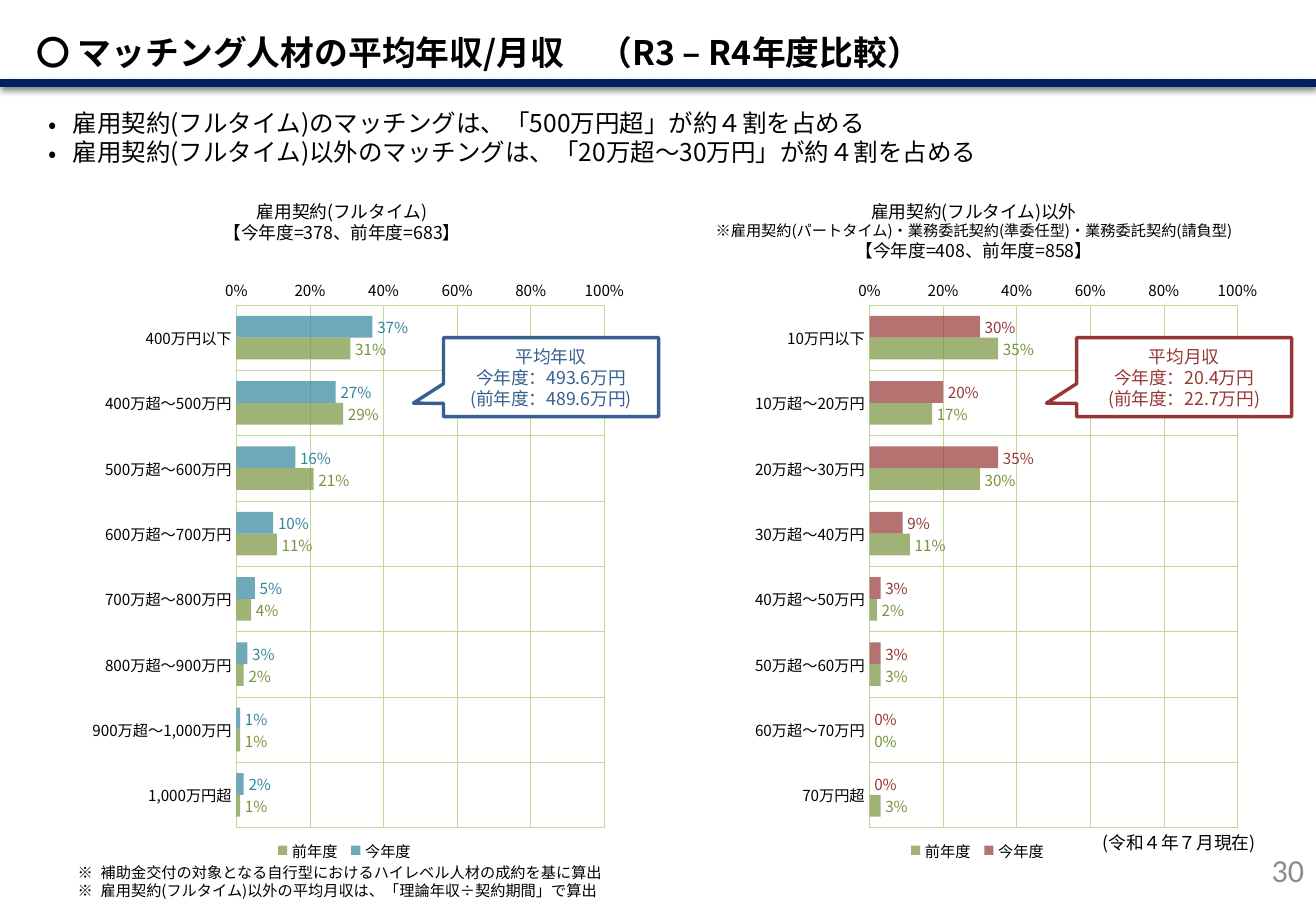
from lxml import etree
from pptx import Presentation
from pptx.chart.data import CategoryChartData
from pptx.dml.color import RGBColor
from pptx.enum.chart import XL_CHART_TYPE as CT, XL_LABEL_POSITION as LP
from pptx.enum.chart import XL_LEGEND_POSITION as LEG, XL_TICK_MARK as TICK
from pptx.enum.shapes import MSO_CONNECTOR, MSO_SHAPE
from pptx.enum.text import MSO_ANCHOR as ANC, PP_ALIGN as AL
from pptx.oxml import parse_xml
from pptx.oxml.ns import nsdecls, qn
from pptx.util import Inches, Pt

FONT = "Noto Sans CJK JP"
COLORS = {"black": "000000", "white": "FFFFFF", "navy": "002060", "shadow": "808080",
          "grid": "C3D69B", "last": "77933C", "teal": "31859C", "blue": "376092",
          "red": "953735", "page": "8C8C8C"}
TITLE = "〇 マッチング人材の平均年収/月収　（R3 – R4年度比較）"
POINTS = ["雇用契約(フルタイム)のマッチングは、「500万円超」が約４割を占める",
          "雇用契約(フルタイム)以外のマッチングは、「20万超～30万円」が約４割を占める"]
NOTES = ["補助金交付の対象となる自行型におけるハイレベル人材の成約を基に算出",
         "雇用契約(フルタイム)以外の平均月収は、「理論年収÷契約期間」で算出"]
AS_OF = ["(令和４年７月現在)"]
PAGE = ["30"]
PANELS = [
    {"heading": ["雇用契約(フルタイム)", "【今年度=378、前年度=683】"],
     "sizes": [10.5, 10.5], "heading_x": 0.31, "chart_x": 0.34, "callout_x": 3.65,
     "bar": "teal", "accent": "blue",
     "cats": ["400万円以下", "400万超～500万円", "500万超～600万円", "600万超～700万円",
              "700万超～800万円", "800万超～900万円", "900万超～1,000万円", "1,000万円超"],
     "this": [0.37, 0.27, 0.16, 0.1, 0.05, 0.03, 0.01, 0.02],
     "last": [0.31, 0.29, 0.21, 0.11, 0.04, 0.02, 0.01, 0.01],
     "callout": ["平均年収", "今年度：493.6万円", "(前年度：489.6万円)"]},
    {"heading": ["雇用契約(フルタイム)以外",
                 "※雇用契約(パートタイム)・業務委託契約(準委任型)・業務委託契約(請負型)",
                 "【今年度=408、前年度=858】"],
     "sizes": [10.5, 9, 10.5], "heading_x": 5.51, "chart_x": 5.55, "callout_x": 8.86,
     "bar": "red", "accent": "red",
     "cats": ["10万円以下", "10万超～20万円", "20万超～30万円", "30万超～40万円",
              "40万超～50万円", "50万超～60万円", "60万超～70万円", "70万円超"],
     "this": [0.3, 0.2, 0.35, 0.09, 0.03, 0.03, 0, 0],
     "last": [0.35, 0.17, 0.3, 0.11, 0.02, 0.03, 0, 0.03],
     "callout": ["平均月収", "今年度：20.4万円", "(前年度：22.7万円)"]},
]


def rgb(name):
    return RGBColor.from_string(COLORS[name])


def set_font(font, size, color="black"):
    font.size, font.name, font.color.rgb = Pt(size), FONT, rgb(color)


def write(sp, lines, sizes, color="black", font=FONT, bold=False, align=AL.LEFT,
          anchor=ANC.TOP, inset=0.05, bullet=None, indent=0.2):
    tf = sp.text_frame
    tf.word_wrap, tf.vertical_anchor = True, anchor
    tf.margin_left = tf.margin_right = Inches(0.1)
    tf.margin_top = tf.margin_bottom = Inches(inset)
    for i, (line, size) in enumerate(zip(lines, sizes)):
        p = tf.paragraphs[0] if i == 0 else tf.add_paragraph()
        p.alignment, p.line_spacing = align, 1.0
        if bullet:
            pPr = p._p.get_or_add_pPr()
            pPr.set("marL", str(Inches(indent)))
            pPr.set("indent", str(-Inches(indent)))
            etree.SubElement(pPr, qn("a:buFont")).set("typeface", font)
            etree.SubElement(pPr, qn("a:buChar")).set("char", bullet)
        r = p.add_run()
        r.text = line
        r.font.size, r.font.name, r.font.bold = Pt(size), font, bold
        r.font.color.rgb = rgb(color)
        etree.SubElement(r._r.get_or_add_rPr(), qn("a:ea")).set("typeface", font)


def add_text(slide, at, lines, sizes, **fmt):
    write(slide.shapes.add_textbox(*map(Inches, at)), lines, sizes, **fmt)


def set_layout(parent, index, box, inner=False):
    for old in parent.findall(qn("c:layout")):
        parent.remove(old)
    layout = etree.Element(qn("c:layout"))
    manual = etree.SubElement(layout, qn("c:manualLayout"))
    items = [("layoutTarget", "inner")] if inner else []
    items += [("xMode", "edge"), ("yMode", "edge")] + list(zip("xywh", box))
    for tag, val in items:
        etree.SubElement(manual, qn("c:" + tag)).set("val", str(val))
    parent.insert(index, layout)


def add_bars(slide, panel):
    data = CategoryChartData(number_format="0%")
    data.categories = panel["cats"]
    data.add_series("今年度", panel["this"])
    data.add_series("前年度", panel["last"])
    at = map(Inches, (panel["chart_x"], 2.18, 4.94, 5.51))
    chart = slide.shapes.add_chart(CT.BAR_CLUSTERED, *at, data).chart
    set_font(chart.font, 9)
    chart.has_title = False
    chart.has_legend = True
    chart.legend.position = LEG.BOTTOM
    chart.legend.include_in_layout = False
    set_font(chart.legend.font, 9)
    set_layout(chart.legend._element, 1, (0.38, 0.85, 0.25, 0.05))
    set_layout(chart._chartSpace.chart.plotArea, 0, (0.325, 0.06, 0.613, 0.781), inner=True)
    chart._chartSpace.chart.addnext(parse_xml(
        f'<c:spPr {nsdecls("c", "a")}><a:noFill/><a:ln><a:noFill/></a:ln></c:spPr>'))
    for axis in (chart.category_axis, chart.value_axis):
        axis.major_tick_mark = axis.minor_tick_mark = TICK.NONE
        axis.format.line.fill.background()
        axis.has_major_gridlines = True
        grid = axis.major_gridlines.format.line
        grid.width, grid.color.rgb = Pt(0.25), rgb("grid")
        set_font(axis.tick_labels.font, 9)
    chart.category_axis.reverse_order = True
    value = chart.value_axis
    value.minimum_scale, value.maximum_scale, value.major_unit = 0, 1, 0.2
    value.tick_labels.number_format = "0%"
    value.tick_labels.number_format_is_linked = False
    plot = chart.plots[0]
    plot.gap_width, plot.overlap, plot.vary_by_categories = 100, 0, False
    for series, color in zip(plot.series, (panel["bar"], "last")):
        fill = series.format.fill
        fill.solid()
        fill.fore_color.rgb = rgb(color)
        tint = series._element.find(qn("c:spPr")).find(".//" + qn("a:srgbClr"))
        etree.SubElement(tint, qn("a:alpha")).set("val", "70000")
        labels = series.data_labels
        labels.show_value, labels.position = True, LP.OUTSIDE_END
        labels.number_format, labels.number_format_is_linked = "0%", False
        set_font(labels.font, 9, color)


def add_callout(slide, panel):
    at = map(Inches, (panel["callout_x"], 2.78, 1.77, 0.65))
    sp = slide.shapes.add_shape(MSO_SHAPE.RECTANGULAR_CALLOUT, *at)
    sp.adjustments[0], sp.adjustments[1] = -0.64, 0.329
    sp.shadow.inherit = False
    sp.fill.solid()
    sp.fill.fore_color.rgb = rgb("white")
    sp.line.color.rgb, sp.line.width = rgb(panel["accent"]), Pt(2)
    write(sp, panel["callout"], [10.5] * 3, color=panel["accent"], align=AL.CENTER,
          anchor=ANC.MIDDLE)


def add_rule(slide):
    y = Inches(0.68)
    rule = slide.shapes.add_connector(MSO_CONNECTOR.STRAIGHT, 0, y, Inches(10.83), y)
    rule.line.color.rgb, rule.line.width = rgb("navy"), Pt(4.75)
    rule._element.spPr.append(parse_xml(
        f'<a:effectLst {nsdecls("a")}><a:outerShdw blurRad="{Pt(4)}" dist="{Pt(2)}" '
        f'dir="5400000" rotWithShape="0"><a:srgbClr val="{COLORS["shadow"]}"/>'
        '</a:outerShdw></a:effectLst>'))


def main():
    prs = Presentation()
    prs.slide_width, prs.slide_height = Inches(10.83), Inches(7.5)
    slide = prs.slides.add_slide(prs.slide_layouts[5])
    title = slide.shapes.title
    title.left, title.top, title.width, title.height = map(Inches, (0.2, 0.13, 10.43, 0.59))
    write(title, [TITLE], [20], bold=True, anchor=ANC.MIDDLE, inset=0.1)
    add_text(slide, (0.3, 0.79, 10.24, 0.69), POINTS, [14.5] * 2, inset=0.1, bullet="•")
    for panel in PANELS:
        add_text(slide, (panel["heading_x"], 1.55, 5.01, 0.7), panel["heading"],
                 panel["sizes"], align=AL.CENTER, inset=0.1)
    add_text(slide, (0.54, 7.06, 6, 0.39), NOTES, [9] * 2, anchor=ANC.MIDDLE,
             bullet="※", indent=0.19)
    add_text(slide, (7.43, 6.74, 3, 0.39), AS_OF, [10.5], align=AL.RIGHT, anchor=ANC.MIDDLE)
    for panel in PANELS:
        add_bars(slide, panel)
        add_callout(slide, panel)
    add_rule(slide)
    add_text(slide, (10.18, 6.97, 0.65, 0.38), PAGE, [19], color="page", font="Calibri",
             align=AL.RIGHT, anchor=ANC.MIDDLE)
    prs.save("out.pptx")


if __name__ == "__main__":
    main()
